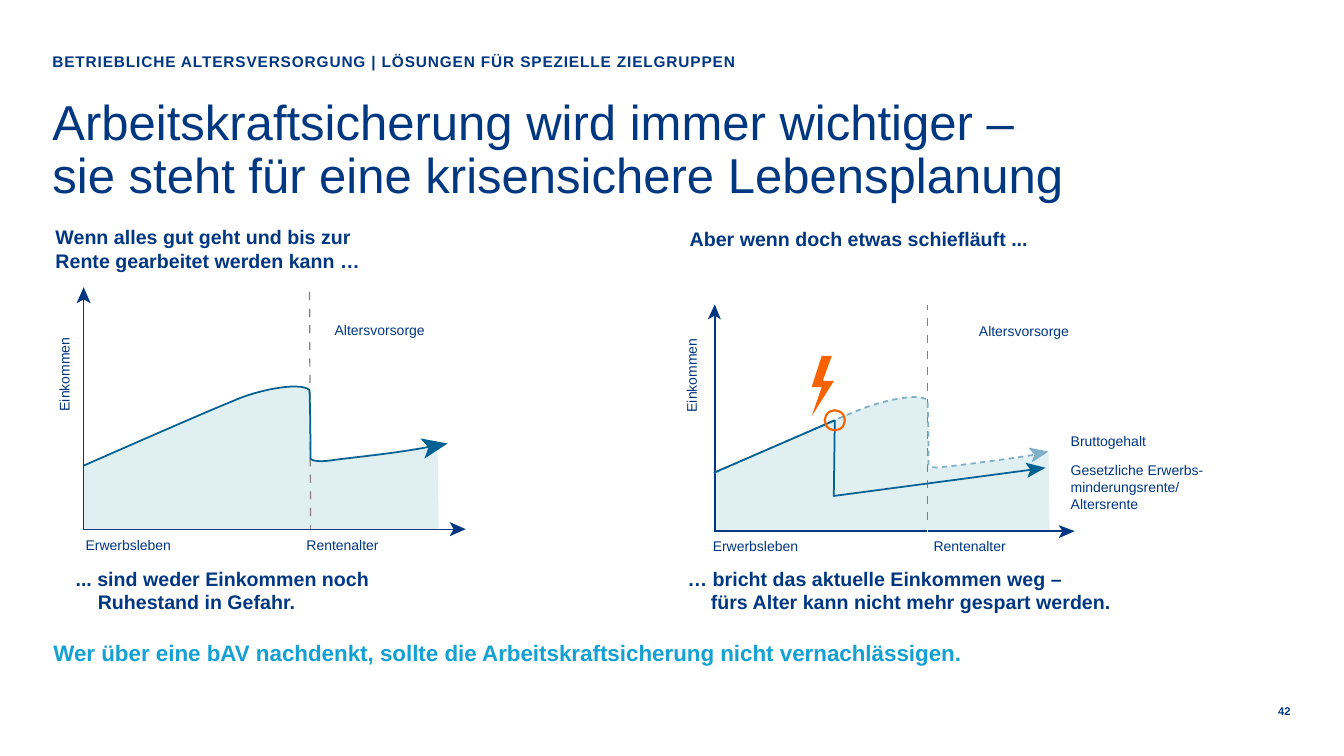
from lxml import etree
from pptx import Presentation
from pptx.dml.color import RGBColor
from pptx.enum.shapes import MSO_SHAPE
from pptx.enum.text import MSO_ANCHOR, PP_ALIGN
from pptx.oxml.ns import qn
from pptx.util import Inches, Pt

TOP, MID, LOW = MSO_ANCHOR.TOP, MSO_ANCHOR.MIDDLE, MSO_ANCHOR.BOTTOM
LEFT, RIGHT = PP_ALIGN.LEFT, PP_ALIGN.RIGHT
OVAL = MSO_SHAPE.OVAL
NAVY, BLUE, PALE, AREA = "003781", "006192", "7FB0C8", "DFEFF2"
GREY, FIRE, SKY, WHITE = "808080", "F86200", "13A0D3", "FFFFFF"
rgb = RGBColor.from_string

deck = Presentation()
deck.slide_width, deck.slide_height = Inches(13.33), Inches(7.5)
slide = deck.slides.add_slide(deck.slide_layouts[6])
shapes = slide.shapes


def text(box, lines, size, bold=False, color=NAVY, pad=0, anchor=TOP,
         align=LEFT, hang=0, lead=None):
    """Add a text box; the lines are parted by line breaks."""
    item = shapes.add_textbox(*[Inches(v) for v in box])
    frame = item.text_frame
    frame.word_wrap, frame.vertical_anchor = True, anchor
    frame.margin_left = frame.margin_right = Inches(pad)
    frame.margin_top = frame.margin_bottom = Inches(pad)
    para = frame.paragraphs[0]
    para.alignment = align
    if lead:
        para.line_spacing = Pt(lead)
    if hang:
        props = para._p.get_or_add_pPr()
        props.set("marL", str(Inches(hang)))
        props.set("indent", str(-Inches(hang)))
    for i, line in enumerate(lines):
        if i:
            para.add_line_break()
        run = para.add_run()
        run.text = line
        run.font.name, run.font.size, run.font.bold = "Arial", Pt(size), bold
        run.font.color.rgb = rgb(color)
    return item


def draw(points, fill=None, line=None, width=1.25, dash=None):
    """Draw an outline; pairs are corners, sextets are Bezier curves.

    A filled outline is closed. Dash gives stroke and gap in line widths.
    """
    path = [points[0]]
    for step in points[1:]:
        if len(step) == 2:
            path.append(step)
            continue
        a, b, c, d = path[-1], step[:2], step[2:4], step[4:]
        for n in range(1, 17):
            t = n / 16
            u = 1 - t
            path.append(tuple(u**3 * a[k] + 3 * u * u * t * b[k]
                              + 3 * u * t * t * c[k] + t**3 * d[k] for k in (0, 1)))
    path = [(Inches(x), Inches(y)) for x, y in path]
    form = shapes.build_freeform(*path[0], scale=1.0)
    form.add_line_segments(path[1:], close=bool(fill))
    item = form.convert_to_shape()
    item.shadow.inherit = False
    if fill:
        item.fill.solid()
        item.fill.fore_color.rgb = rgb(fill)
    else:
        item.fill.background()
    if not line:
        item.line.fill.background()
        return
    item.line.color.rgb, item.line.width = rgb(line), Pt(width)
    if dash:
        style = etree.SubElement(item.line._get_or_add_ln(), qn("a:custDash"))
        etree.SubElement(style, qn("a:ds"), d=str(int(dash[0] * 100000)),
                         sp=str(int(dash[1] * 100000)))


# Headings
kicker = text((0.52, 0.52, 10.2, 0.28),
              ["BETRIEBLICHE ALTERSVERSORGUNG | LÖSUNGEN FÜR SPEZIELLE ZIELGRUPPEN"], 11, True)
kicker.text_frame.paragraphs[0].runs[0].font._element.set("spc", "60")
text((0.52, 0.96, 10.2, 1.02),
     ["Arbeitskraftsicherung wird immer wichtiger – sie steht für eine "
      "krisensichere Lebensplanung"], 35, lead=38)
text((0.55, 2.32, 3.36, 0.38),
     ["Wenn alles gut geht und bis zur", "Rente gearbeitet werden kann …"],
     14, True, anchor=LOW)
text((6.84, 2.25, 4.07, 0.37), ["Aber wenn doch etwas schiefläuft ..."], 14, True)

# Left chart: income area, axes, retirement line, income curve
rise = [(0.83, 4.62), (0.83, 4.62, 2.1, 4.06, 2.31, 3.98),
        (2.52, 3.88, 2.97, 3.78, 3.07, 3.87), (3.08, 4.13, 3.08, 4.55, 3.08, 4.55)]
draw(rise + [(3.08, 4.55, 3.07, 4.6, 3.21, 4.57), (3.35, 4.55, 4.34, 4.42, 4.34, 4.42),
             (4.35, 5.25), (0.83, 5.25)], AREA)
draw([(0.83, 2.96), (0.83, 5.25), (4.51, 5.25)], line=NAVY, width=0.88)
draw([(4.62, 5.25), (4.46, 5.32), (4.5, 5.25), (4.46, 5.18)], NAVY)
draw([(0.83, 2.85), (0.9, 3.01), (0.83, 2.97), (0.76, 3.01)], NAVY)
draw([(3.08, 5.21), (3.08, 5.25)], line=GREY, width=0.88)
draw([(3.08, 5.12), (3.07, 2.87)], line=GREY, width=0.88, dash=(6.7, 6.8))
draw(rise + [(3.08, 4.55, 3.1, 4.59, 3.27, 4.57), (3.38, 4.55, 3.94, 4.5, 4.27, 4.43)],
     line=BLUE)
draw([(4.44, 4.4), (4.21, 4.55), (4.25, 4.44), (4.17, 4.35)], BLUE)

# Right chart: income area, axes, retirement line
rise = [(7.09, 4.69), (7.09, 4.69, 8.28, 4.16, 8.49, 4.08),
        (8.72, 3.98, 9.11, 3.89, 9.2, 3.97), (9.21, 4.22, 9.21, 4.62, 9.21, 4.62)]
draw(rise + [(9.21, 4.62, 9.2, 4.66, 9.33, 4.64), (9.46, 4.62, 10.4, 4.5, 10.4, 4.5),
             (10.41, 5.27), (7.09, 5.27)], AREA)
draw([(7.08, 5.27), (10.55, 5.27)], line=NAVY)
draw([(10.66, 5.27), (10.5, 5.34), (10.54, 5.27), (10.5, 5.21)], NAVY)
draw([(7.09, 3.12), (7.09, 5.28)], line=NAVY, width=1.9)
draw([(7.09, 3.02), (7.15, 3.17), (7.09, 3.13), (7.02, 3.17)], NAVY)
draw([(9.2, 5.24), (9.2, 5.28)], line=WHITE)
draw([(9.2, 5.16), (9.2, 3.03)], line=GREY, dash=(4.6, 4.65))

# Lost income (dashed), reduced income, break point and flash
draw(rise + [(9.21, 4.62, 9.23, 4.65, 9.38, 4.63), (9.47, 4.62, 9.89, 4.57, 10.27, 4.51)],
     line=PALE, dash=(3, 2.5))
draw([(10.4, 4.48), (10.23, 4.59), (10.26, 4.51), (10.2, 4.44)], PALE)
draw([(7.08, 4.69), (8.28, 4.17), (8.27, 4.92), (10.23, 4.66)], line=BLUE)
draw([(10.37, 4.64), (10.19, 4.74), (10.22, 4.66), (10.17, 4.59)], BLUE)
ring = shapes.add_shape(OVAL, Inches(8.18), Inches(4.07), Inches(0.2), Inches(0.2))
ring.shadow.inherit = False
ring.fill.background()
ring.line.color.rgb, ring.line.width = rgb(FIRE), Pt(1.5)
draw([(8.15, 3.53), (8.25, 3.53), (8.16, 3.78), (8.27, 3.78), (8.05, 4.13),
      (8.15, 3.84), (8.05, 3.84)], FIRE)

# Chart labels
for x, y, word in [(0.8, 5.24, "Erwerbsleben"), (2.99, 5.24, "Rentenalter"),
                   (3.27, 3.11, "Altersvorsorge"), (7.02, 5.25, "Erwerbsleben"),
                   (9.21, 5.25, "Rentenalter"), (9.66, 3.12, "Altersvorsorge")]:
    text((x, y, 1.34, 0.33), [word], 10, pad=0.05, anchor=MID)
for x, y in [(0.11, 3.44), (6.33, 3.45)]:
    text((x, y, 1.05, 0.33), ["Einkommen"], 10, pad=0.05, anchor=MID).rotation = 270
text((10.54, 4.21, 1.96, 0.39), ["Bruttogehalt"], 10, pad=0.08)
text((10.54, 4.5, 1.96, 0.8),
     ["Gesetzliche Erwerbs-", "minderungsrente/", "Altersrente"], 10, pad=0.08)

# Conclusions
text((0.7, 5.57, 3.76, 0.57), ["... sind weder Einkommen noch", "Ruhestand in Gefahr."],
     14, True, pad=0.05, anchor=MID, hang=0.22)
text((6.77, 5.57, 4.55, 0.57),
     ["… bricht das aktuelle Einkommen weg –", "fürs Alter kann nicht mehr gespart werden."],
     14, True, pad=0.05, anchor=MID, hang=0.23)
text((0.53, 6.32, 11.6, 0.3),
     ["Wer über eine bAV nachdenkt, sollte die Arbeitskraftsicherung nicht vernachlässigen."],
     16, True, SKY, anchor=MID)
text((12.51, 6.97, 0.29, 0.16), ["42"], 8, True, anchor=MID, align=RIGHT, lead=10)

deck.save("out.pptx")
